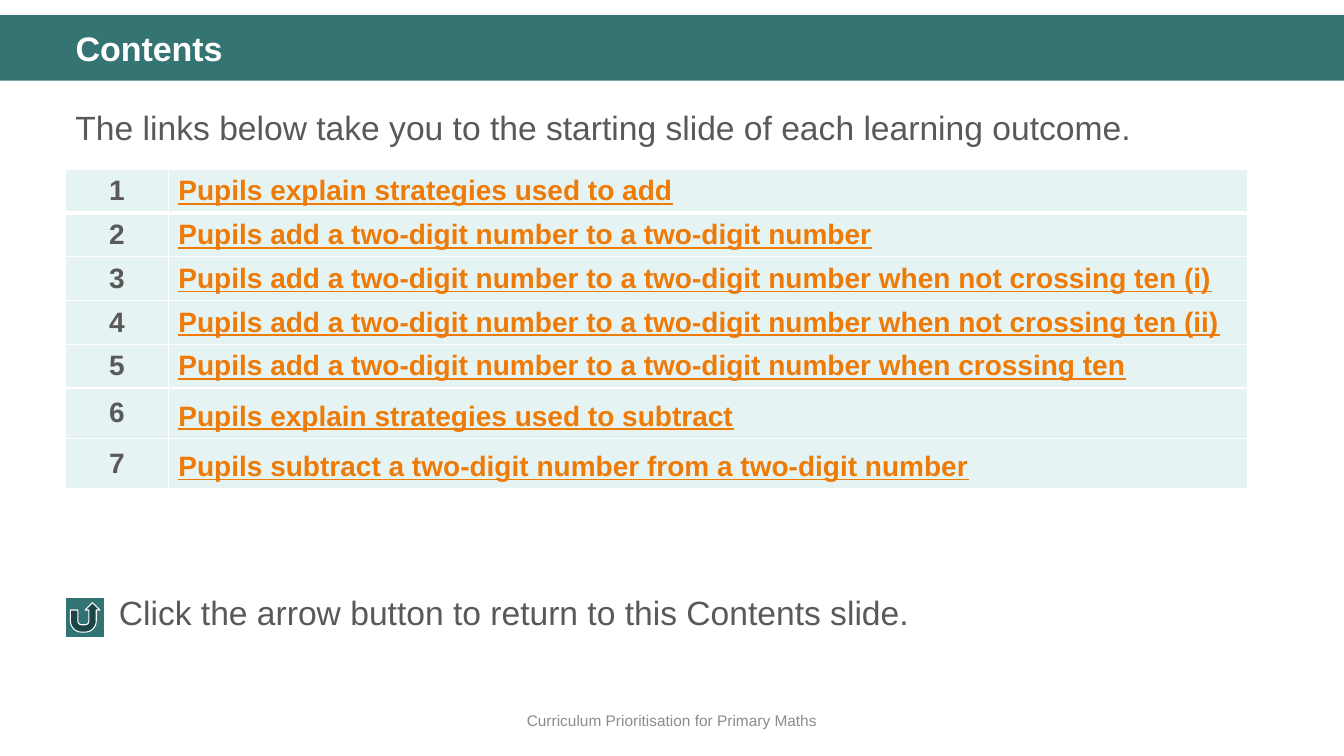
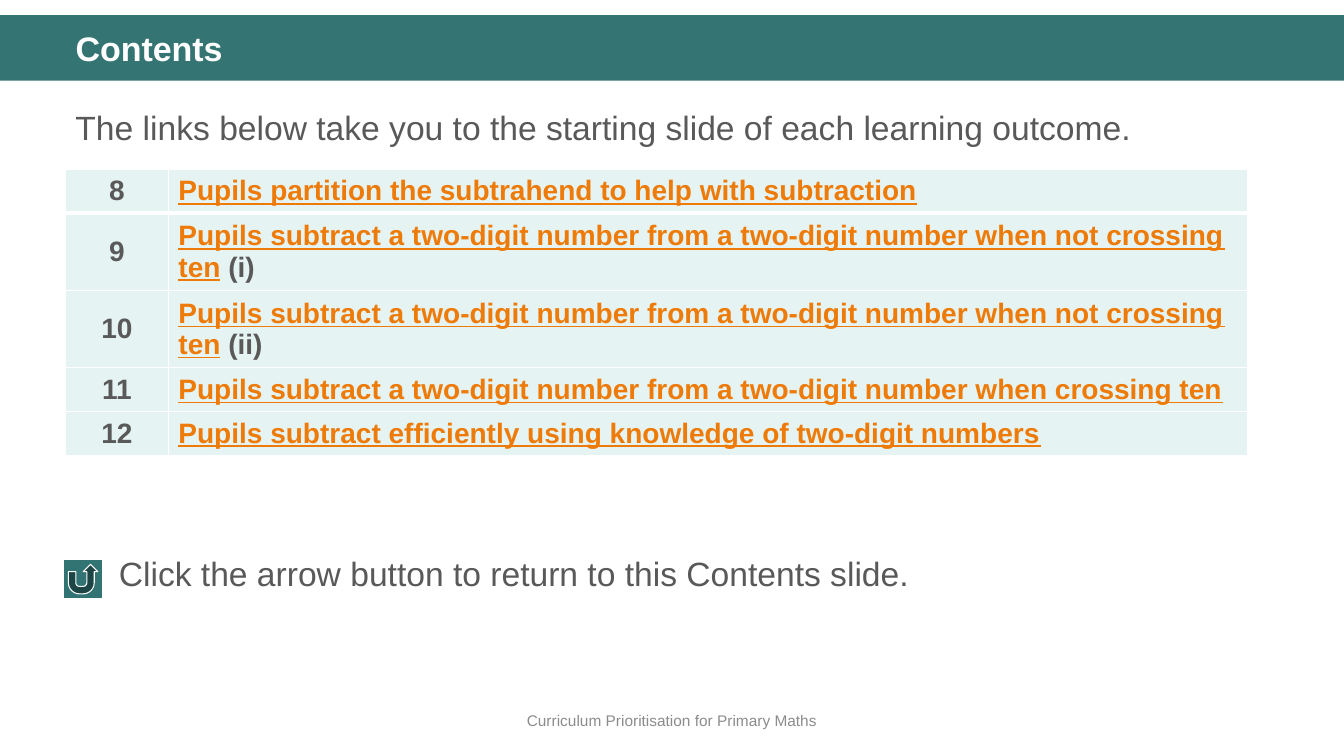
from pptx import Presentation
from pptx import util as u
from pptx.dml.color import RGBColor
from pptx.enum import shapes, text
from pptx.oxml import parse_xml
from pptx.oxml.ns import nsdecls

Inches, Pt = u.Inches, u.Pt

# Content
TITLE = "Contents"
INTRO = "The links below take you to the starting slide of each learning outcome."
RETURN_NOTE = "Click the arrow button to return to this Contents slide."
FOOTER = "Curriculum Prioritisation for Primary Maths"

# Each outcome: linked text, plain ending, line spacing
CONTENTS = [
    {
        "first_number": 1, "note_top": 5.82, "button_left": 0.65,
        "outcomes": [
            ("Pupils explain strategies used to add", "", 1),
            ("Pupils add a two-digit number to a two-digit number", "", 1),
            ("Pupils add a two-digit number to a two-digit number when not crossing ten (i)", "", 1),
            ("Pupils add a two-digit number to a two-digit number when not crossing ten (ii)", "", 1),
            ("Pupils add a two-digit number to a two-digit number when crossing ten", "", 1),
            ("Pupils explain strategies used to subtract", "", 1.2),
            ("Pupils subtract a two-digit number from a two-digit number", "", 1.2),
        ],
    },
    {
        "first_number": 8, "note_top": 5.44, "button_left": 0.63,
        "outcomes": [
            ("Pupils partition the subtrahend to help with subtraction", "", 1),
            ("Pupils subtract a two-digit number from a two-digit number when not crossing ten", " (i)", 1),
            ("Pupils subtract a two-digit number from a two-digit number when not crossing ten", " (ii)", 1),
            ("Pupils subtract a two-digit number from a two-digit number when crossing ten", "", 1),
            ("Pupils subtract efficiently using knowledge of two-digit numbers", "", 1),
        ],
    },
]

# Shared style
FONT = "Arial"
COLOURS = {
    "band": "347574", "button": "327473", "cell": "E5F3F2", "white": "FFFFFF",
    "body": "595959", "link": "EE7B08", "footer": "8C8C8C",
}
SLIDE_WIDTH, SLIDE_HEIGHT = 13.33, 7.5
LEFT = 0.65
TEXT_WIDTH = 12.18
COLUMN_WIDTHS = (1.02, 10.7)
ROW_HEIGHT = 0.41


def colour(name):
    return RGBColor.from_string(COLOURS[name])


def style_font(font, size, name, bold=False, underline=False):
    font.name, font.size, font.bold = FONT, Pt(size), bold
    font.underline = underline
    font.color.rgb = colour(name)


def place(shape, left, top, width, height):
    shape.left, shape.top = Inches(left), Inches(top)
    shape.width, shape.height = Inches(width), Inches(height)


def add_preset(slide, preset, box, fill, line=None):
    shape = slide.shapes.add_shape(preset, *map(Inches, box))
    shape.shadow.inherit = False
    shape.fill.solid()
    shape.fill.fore_color.rgb = colour(fill)
    if line:
        shape.line.color.rgb = colour(line)
        shape.line.width = Pt(0.75)
    else:
        shape.line.fill.background()


def add_label(slide, words, box, size, name):
    frame = slide.shapes.add_textbox(*map(Inches, box)).text_frame
    frame.word_wrap = True
    frame.text = words
    paragraph = frame.paragraphs[0]
    style_font(paragraph.runs[0].font, size, name)
    return frame, paragraph


def style_cell(cell, bottom_width):
    properties = cell._tc.get_or_add_tcPr()
    for side, width in (("L", 1), ("R", 1), ("T", 1), ("B", bottom_width)):
        properties.append(parse_xml(
            f'<a:ln{side} {nsdecls("a")} w="{Pt(width)}"><a:solidFill>'
            f'<a:srgbClr val="{COLOURS["white"]}"/></a:solidFill></a:ln{side}>'))
    cell.fill.solid()
    cell.fill.fore_color.rgb = colour("cell")
    cell.vertical_anchor = text.MSO_ANCHOR.MIDDLE


def add_outcomes(slide, first_number, outcomes):
    box = (LEFT, 1.68, sum(COLUMN_WIDTHS), ROW_HEIGHT * len(outcomes))
    table = slide.shapes.add_table(len(outcomes), 2, *map(Inches, box)).table
    for column, width in zip(table.columns, COLUMN_WIDTHS):
        column.width = Inches(width)
    for index, (link, ending, spacing) in enumerate(outcomes):
        number_cell, outcome_cell = table.rows[index].cells
        for cell in (number_cell, outcome_cell):
            style_cell(cell, 1 if index else 3)

        number_cell.text = str(first_number + index)
        paragraph = number_cell.text_frame.paragraphs[0]
        paragraph.alignment = text.PP_ALIGN.CENTER
        style_font(paragraph.runs[0].font, 20, "body", bold=True)

        outcome_cell.text = link
        paragraph = outcome_cell.text_frame.paragraphs[0]
        paragraph.line_spacing = spacing
        style_font(paragraph.runs[0].font, 20, "link", bold=True, underline=True)
        if ending:
            run = paragraph.add_run()
            run.text = ending
            style_font(run.font, 20, "body", bold=True)


def add_title(slide):
    title = slide.shapes.title
    place(title, LEFT, 0.27, TEXT_WIDTH, 0.47)
    frame = title.text_frame
    frame.text = TITLE
    frame.auto_size = text.MSO_AUTO_SIZE.NONE
    frame.vertical_anchor = text.MSO_ANCHOR.TOP
    paragraph = frame.paragraphs[0]
    paragraph.alignment = text.PP_ALIGN.LEFT
    paragraph.line_spacing = 0.9
    style_font(paragraph.runs[0].font, 24.3, "white", bold=True)
    # Bring the title in front of the band
    slide.shapes._spTree.append(title._element)


def add_contents_slide(presentation, content):
    slide = presentation.slides.add_slide(presentation.slide_layouts[5])

    # Band and footer
    add_preset(slide, shapes.MSO_SHAPE.RECTANGLE, (0, 0.15, SLIDE_WIDTH, 0.65), "band")
    frame, paragraph = add_label(slide, FOOTER, (0, 6.95, SLIDE_WIDTH, 0.4), 11, "footer")
    frame.vertical_anchor = text.MSO_ANCHOR.MIDDLE
    paragraph.alignment = text.PP_ALIGN.CENTER

    # Introduction and outcomes
    frame, paragraph = add_label(slide, INTRO, (LEFT, 0.93, TEXT_WIDTH, 0.6), 24, "body")
    paragraph.line_spacing = 1.2
    add_outcomes(slide, content["first_number"], content["outcomes"])

    # Return button and its note
    note_top = content["note_top"]
    add_preset(slide, shapes.MSO_SHAPE.ACTION_BUTTON_RETURN,
               (content["button_left"], note_top + 0.11, 0.39, 0.39), "button", "white")
    add_label(slide, RETURN_NOTE, (1.08, note_top, 11.32, 0.5), 24, "body")

    add_title(slide)


def main():
    presentation = Presentation()
    presentation.slide_width = Inches(SLIDE_WIDTH)
    presentation.slide_height = Inches(SLIDE_HEIGHT)
    for content in CONTENTS:
        add_contents_slide(presentation, content)
    presentation.save("out.pptx")


if __name__ == "__main__":
    main()
